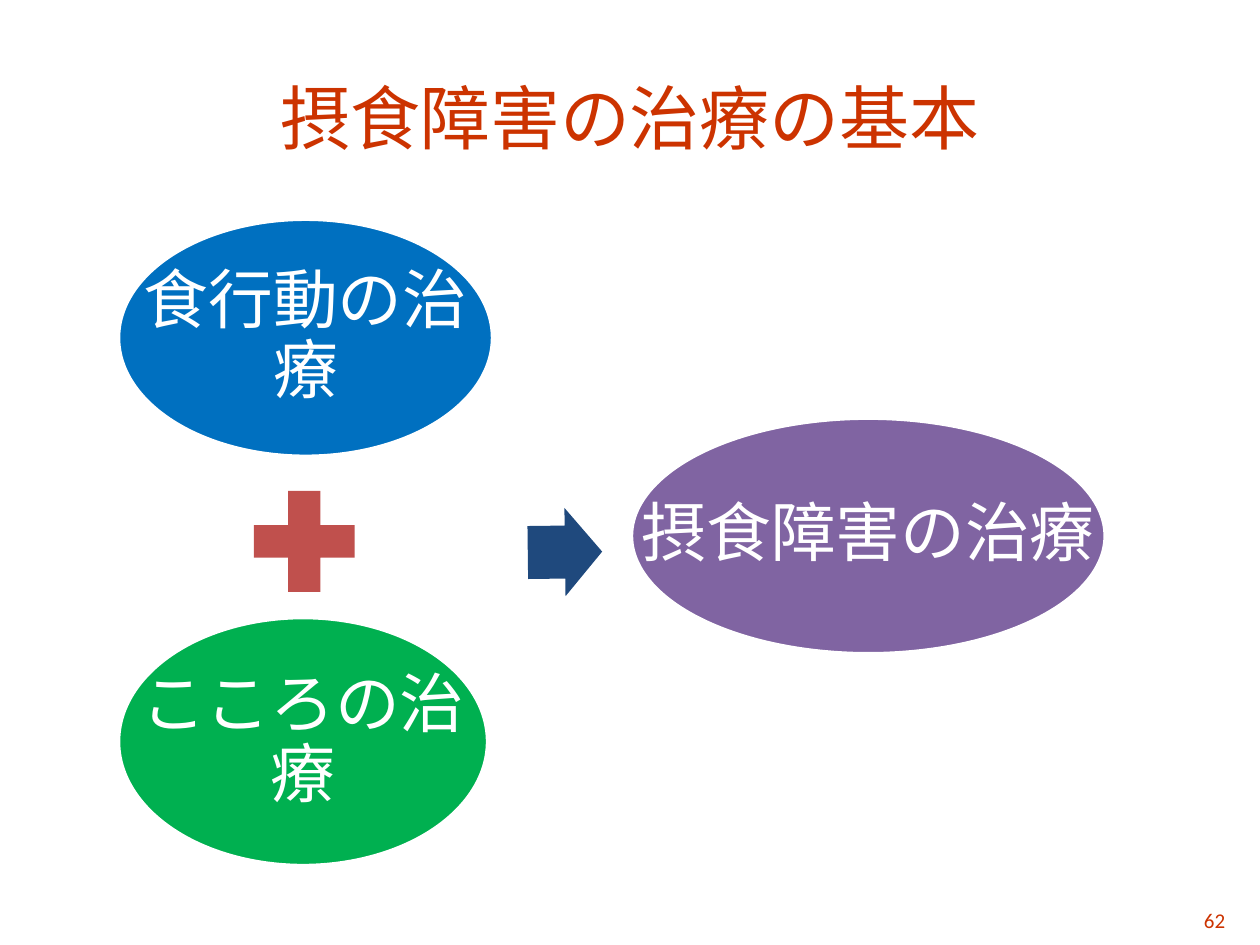
from pptx import Presentation
from pptx.dml.color import RGBColor
from pptx.enum.shapes import MSO_SHAPE
from pptx.enum.text import MSO_ANCHOR, PP_ALIGN
from pptx.util import Cm, Pt

WHITE = RGBColor(0xFF, 0xFF, 0xFF)
ORANGE = RGBColor(0xCC, 0x33, 0x00)
BLUE = RGBColor(0x00, 0x70, 0xC0)
GREEN = RGBColor(0x00, 0xB0, 0x50)
PURPLE = RGBColor(0x80, 0x64, 0xA2)
RED = RGBColor(0xC0, 0x50, 0x4D)
NAVY = RGBColor(0x1F, 0x49, 0x7D)

TITLE = ("摂食障害の治療の基本", (1.27, 0.76, 22.86, 3.18))
PAGE_NUMBER = ("62", (23.5, 18.03, 1.45, 1.02))
TREATMENTS = [
    ("食行動の治療", BLUE, (2.39, 4.42, 7.54, 4.78)),
    ("こころの治療", GREEN, (2.39, 12.45, 7.44, 5)),
    ("摂食障害の治療", PURPLE, (12.73, 8.43, 9.55, 4.75)),
]
PLUS_BOX = (4.75, 9.53, 2.77, 2.77)
ARROW_BOX = (10.64, 10.24, 1.5, 1.78)


def add_filled(slide, preset, box, color):
    shape = slide.shapes.add_shape(preset, *map(Cm, box))
    shape.shadow.inherit = False
    shape.fill.solid()
    shape.fill.fore_color.rgb = color
    shape.line.fill.background()
    return shape


def add_text(slide, text, box, font_name, size, color, align=PP_ALIGN.CENTER):
    frame = slide.shapes.add_textbox(*map(Cm, box)).text_frame
    frame.word_wrap = True
    frame.vertical_anchor = MSO_ANCHOR.MIDDLE
    paragraph = frame.paragraphs[0]
    paragraph.text = text
    paragraph.alignment = align
    paragraph.font.name = font_name
    paragraph.font.size = Pt(size)
    paragraph.font.color.rgb = color
    return frame


def add_treatment(slide, text, color, box):
    ellipse = add_filled(slide, MSO_SHAPE.OVAL, box, color)
    ellipse.line.color.rgb = WHITE
    ellipse.line.width = Pt(2)
    label = add_text(slide, text, box, "Noto Sans CJK JP", 37, WHITE)
    label.margin_left = label.margin_right = Cm(0.13)
    label.margin_top = label.margin_bottom = Cm(0.13)
    label.paragraphs[0].line_spacing = 0.9
    label.paragraphs[0].space_after = Pt(13)


def main():
    presentation = Presentation()
    presentation.slide_width = Cm(25.4)
    presentation.slide_height = Cm(19.05)
    slide = presentation.slides.add_slide(presentation.slide_layouts[6])

    add_text(slide, *TITLE, "Calibri", 40, ORANGE)
    for text, color, box in TREATMENTS:
        add_treatment(slide, text, color, box)
    add_filled(slide, MSO_SHAPE.MATH_PLUS, PLUS_BOX, RED)
    arrow = add_filled(slide, MSO_SHAPE.RIGHT_ARROW, ARROW_BOX, NAVY)
    arrow.adjustments[0] = 0.6
    arrow.rotation = 359.3
    add_text(slide, *PAGE_NUMBER, "Calibri", 12, ORANGE, PP_ALIGN.RIGHT)

    presentation.save("out.pptx")


if __name__ == "__main__":
    main()
